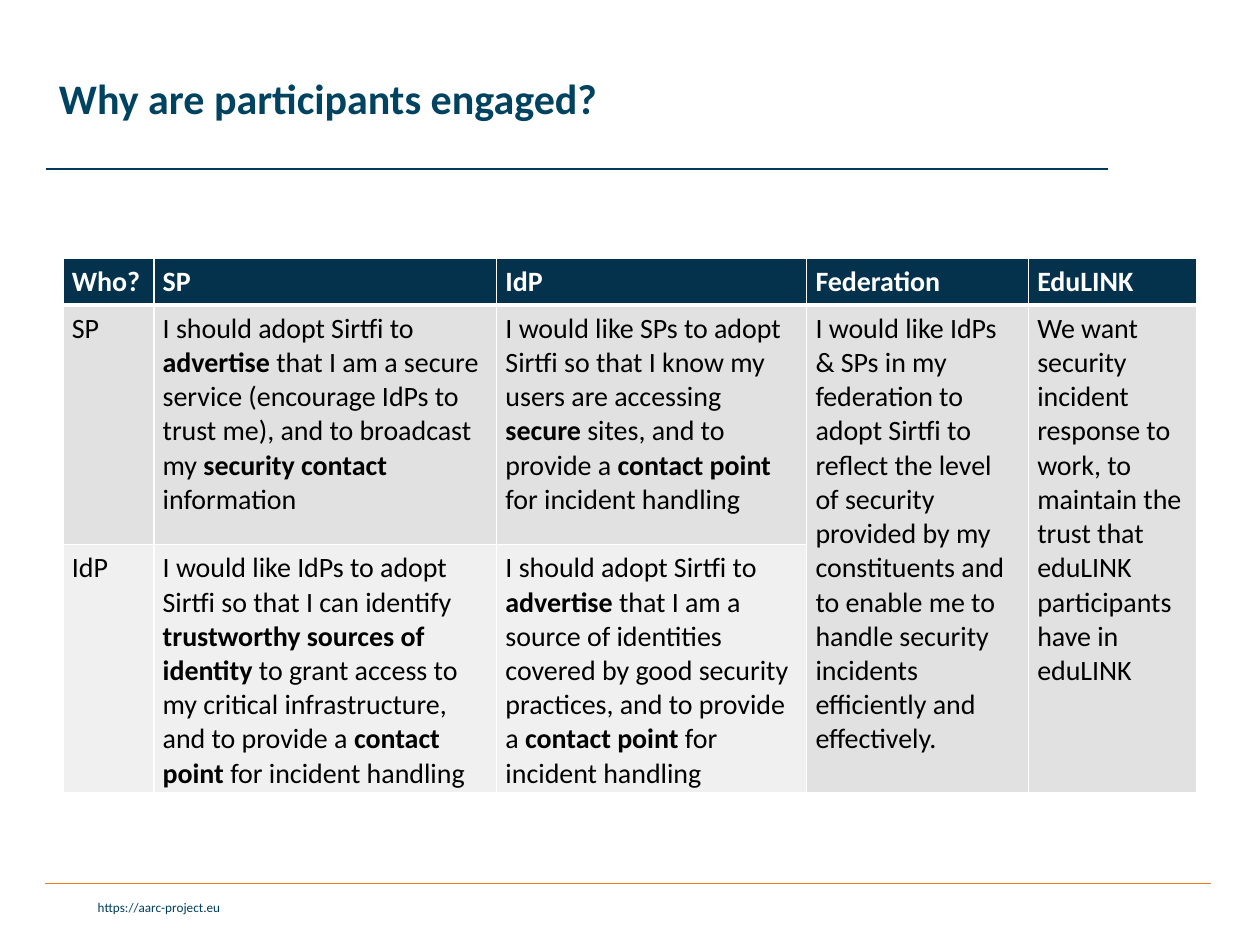
import dataclasses

import pptx
import pptx.dml.color
import pptx.enum.shapes
import pptx.enum.text
import pptx.oxml.ns
import pptx.util
from lxml import etree

Cm = pptx.util.Cm
Pt = pptx.util.Pt
ANCHOR = pptx.enum.text.MSO_ANCHOR
ALIGN = pptx.enum.text.PP_ALIGN


@dataclasses.dataclass(frozen=True)
class Theme:
    font: str = "Calibri"
    title: str = "004361"
    title_rule: str = "003959"
    footer: str = "003F5E"
    footer_rule: str = "F57B20"
    header_fill: str = "04324D"
    row_fills: tuple = ("E1E1E1", "F0F0F0")
    body: str = "000000"
    white: str = "FFFFFF"
    title_size: float = 24
    table_size: float = 16
    footer_size: float = 7.5


THEME = Theme()

COLUMN_WIDTHS = (1.83, 6.91, 6.25, 4.47, 3.4)
ROW_HEIGHTS = (0.94, 4.83, 5.0)

# Text between ** marks is bold
ENGAGEMENT = (
    ("**Who?**", "**SP**", "**IdP**", "**Federation**", "**EduLINK**"),
    (
        "SP",
        "I should adopt Sirtfi to **advertise** that I am a secure service "
        "(encourage IdPs to trust me), and to broadcast my "
        "**security contact **information",
        "I would like SPs to adopt Sirtfi so that I know my users are accessing "
        "**secure** sites, and to provide a **contact point **for incident handling",
        "I would like IdPs & SPs in my federation to adopt Sirtfi to reflect the "
        "level of security provided by my constituents and to enable me to handle "
        "security incidents efficiently and effectively.",
        "We want security incident response to work, to maintain the trust that "
        "eduLINK participants have in eduLINK",
    ),
    (
        "IdP",
        "I would like IdPs to adopt Sirtfi so that I can identify "
        "**trustworthy sources of identity **to grant access to my critical "
        "infrastructure, and to provide a **contact point** for incident handling",
        "I should adopt Sirtfi to **advertise** that I am a source of identities "
        "covered by good security practices, and to provide a "
        "**contact point **for incident handling",
    ),
)


def rgb(color):
    return pptx.dml.color.RGBColor.from_string(color)


def write(paragraph, marked_text, size, color):
    for index, part in enumerate(marked_text.split("**")):
        if part:
            run = paragraph.add_run()
            run.text = part
            run.font.name = THEME.font
            run.font.size = Pt(size)
            run.font.bold = index % 2 == 1
            run.font.color.rgb = rgb(color)


def add_text(slide, box, marked_text, size, color):
    frame = slide.shapes.add_textbox(*(Cm(length) for length in box)).text_frame
    frame.word_wrap = True
    write(frame.paragraphs[0], marked_text, size, color)
    return frame


def add_rule(slide, left, top, width, color):
    rule = slide.shapes.add_connector(
        pptx.enum.shapes.MSO_CONNECTOR.STRAIGHT,
        Cm(left), Cm(top), Cm(left + width), Cm(top))
    rule.line.color.rgb = rgb(color)
    rule.line.width = Pt(1)
    etree.SubElement(rule._element.spPr, pptx.oxml.ns.qn("a:effectLst"))


def set_borders(cell, bottom_width):
    properties = cell._tc.get_or_add_tcPr()
    widths = {"lnL": 1, "lnR": 1, "lnT": 1, "lnB": bottom_width}
    for position, (side, width) in enumerate(widths.items()):
        border = etree.Element(pptx.oxml.ns.qn("a:" + side), w=str(Pt(width)))
        fill = etree.SubElement(border, pptx.oxml.ns.qn("a:solidFill"))
        etree.SubElement(fill, pptx.oxml.ns.qn("a:srgbClr"), val=THEME.white)
        properties.insert(position, border)


def add_title(slide, left, top, width, height):
    frame = add_text(slide, (left, top, width, height),
                     "**Why are participants engaged?**",
                     THEME.title_size, THEME.title)
    frame.vertical_anchor = ANCHOR.MIDDLE
    frame.paragraphs[0].line_spacing = 0.9
    add_rule(slide, left - 0.02, top + 3.2, 21.41, THEME.title_rule)


def add_engagement_table(slide, left, top):
    table = slide.shapes.add_table(
        len(ROW_HEIGHTS), len(COLUMN_WIDTHS), Cm(left), Cm(top),
        Cm(sum(COLUMN_WIDTHS)), Cm(sum(ROW_HEIGHTS))).table
    for column, width in zip(table.columns, COLUMN_WIDTHS):
        column.width = Cm(width)
    for row, height in zip(table.rows, ROW_HEIGHTS):
        row.height = Cm(height)

    # Federation and EduLINK answers span both participant rows
    for column in (3, 4):
        table.cell(1, column).merge(table.cell(2, column))

    fills = (THEME.header_fill, *THEME.row_fills)
    for row, fill in enumerate(fills):
        is_header = row == 0
        for column in range(len(COLUMN_WIDTHS)):
            cell = table.cell(row, column)
            cell.fill.solid()
            cell.fill.fore_color.rgb = rgb(fill)
            cell.margin_left = cell.margin_right = Cm(0.18)
            cell.margin_top = cell.margin_bottom = Cm(0.13)
            set_borders(cell, 3 if is_header else 1)
        for column, answer in enumerate(ENGAGEMENT[row]):
            write(table.cell(row, column).text_frame.paragraphs[0], answer,
                  THEME.table_size, THEME.white if is_header else THEME.body)


def add_footer(slide, left, top, width):
    add_rule(slide, left, top, width, THEME.footer_rule)
    frame = add_text(slide, (left, top + 0.2, 3.78, 0.58),
                     "https://aarc-project.eu", THEME.footer_size, THEME.footer)
    frame.paragraphs[0].alignment = ALIGN.RIGHT


def main():
    deck = pptx.Presentation()
    deck.slide_width, deck.slide_height = Cm(25.4), Cm(19.05)
    slide = deck.slides.add_slide(deck.slide_layouts[6])
    add_footer(slide, 0.91, 17.81, 23.5)
    add_title(slide, 0.94, 0.2, 20.02, 3.68)
    add_engagement_table(slide, 1.27, 5.21)
    deck.save("out.pptx")


if __name__ == "__main__":
    main()
